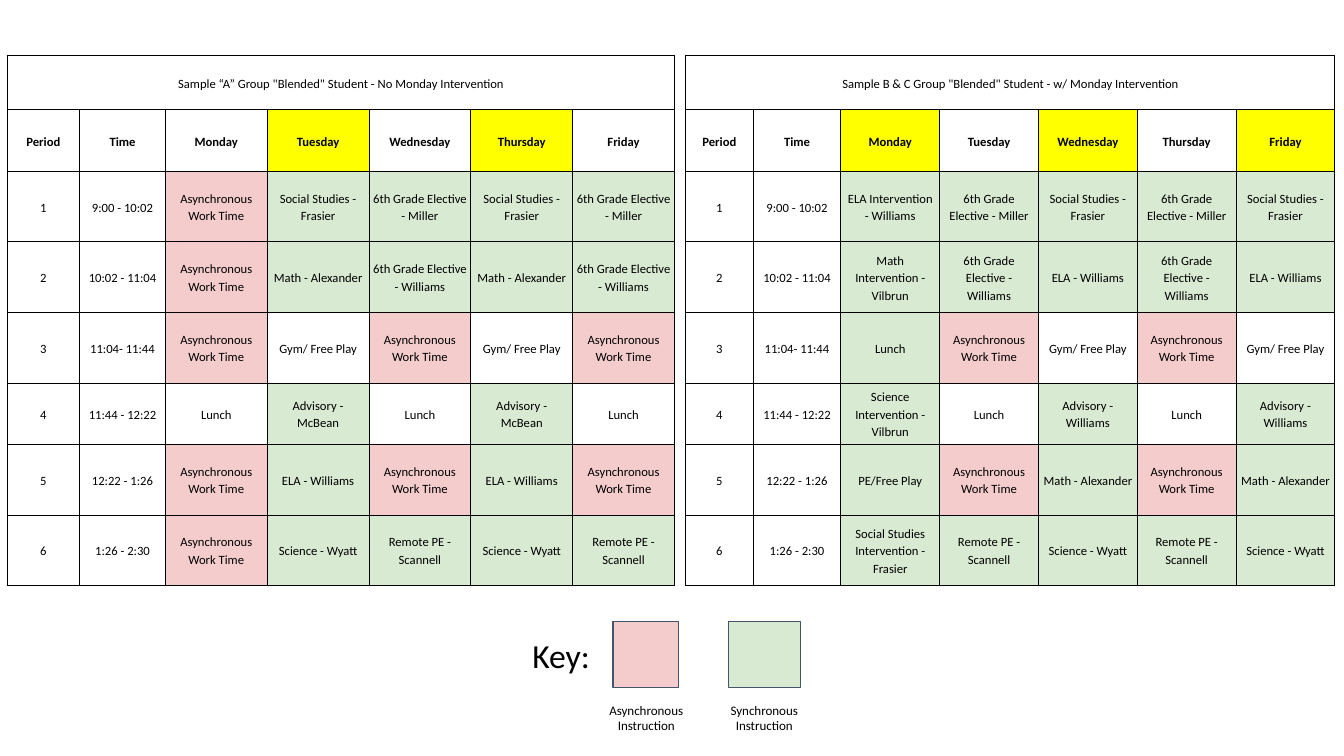
from dataclasses import dataclass

from lxml import etree
from pptx import Presentation
from pptx import util as u
from pptx.dml.color import RGBColor
from pptx.enum import shapes, text
from pptx.oxml import ns


@dataclass(frozen=True)
class Theme:
    font: str = "Calibri"
    ink: str = "000000"
    key_line: str = "44546A"
    asynchronous: str = "F4CCCC"
    synchronous: str = "D9EAD3"
    in_person: str = "FFFF00"
    line_width: float = 0.75
    table_size: float = 9
    key_size: float = 24
    label_size: float = 9.3


DAYS = ["Monday", "Tuesday", "Wednesday", "Thursday", "Friday"]
TIMES = ["9:00 - 10:02", "10:02 - 11:04", "11:04- 11:44",
         "11:44 - 12:22", "12:22 - 1:26", "1:26 - 2:30"]
ROW_HEIGHTS = [0.54, 0.61, 0.7, 0.7, 0.7, 0.61, 0.7, 0.7]
ASYNC = "Asynchronous Work Time"
BREAKS = {"Lunch", "Gym/ Free Play"}

GROUP_A_MONDAY = [ASYNC, ASYNC, ASYNC, "Lunch", ASYNC, ASYNC]
GROUP_A_IN_PERSON = ["Social Studies - Frasier", "Math - Alexander", "Gym/ Free Play",
                     "Advisory - McBean", "ELA - Williams", "Science - Wyatt"]
GROUP_BC_MONDAY = ["ELA Intervention - Williams", "Math Intervention - Vilbrun", "Lunch",
                   "Science Intervention - Vilbrun", "PE/Free Play",
                   "Social Studies Intervention - Frasier"]
GROUP_BC_IN_PERSON = ["Social Studies - Frasier", "ELA - Williams", "Gym/ Free Play",
                      "Advisory - Williams", "Math - Alexander", "Science - Wyatt"]
REMOTE = ["6th Grade Elective - Miller", "6th Grade Elective - Williams", ASYNC,
          "Lunch", ASYNC, "Remote PE - Scannell"]


class ScheduleSlide:
    def __init__(self, slide, theme):
        self.slide = slide
        self.theme = theme

    def format_paragraph(self, paragraph, size, align, bold=False):
        paragraph.alignment = align
        paragraph.font.name = self.theme.font
        paragraph.font.size = u.Pt(size)
        paragraph.font.bold = bold
        paragraph.font.color.rgb = RGBColor.from_string(self.theme.ink)

    def label(self, left, top, width, wording, size, align=text.PP_ALIGN.CENTER):
        box = self.slide.shapes.add_textbox(
            u.Inches(left), u.Inches(top), u.Inches(width), u.Inches(0.32))
        frame = box.text_frame
        frame.word_wrap = True
        frame.vertical_anchor = text.MSO_ANCHOR.MIDDLE
        frame.margin_left = frame.margin_right = u.Inches(0.13)
        frame.margin_top = frame.margin_bottom = u.Inches(0.13)
        frame.text = wording
        self.format_paragraph(frame.paragraphs[0], size, align)

    def swatch(self, left, width, color):
        square = self.slide.shapes.add_shape(
            shapes.MSO_SHAPE.RECTANGLE,
            u.Inches(left), u.Inches(6.17), u.Inches(width), u.Inches(0.65))
        square.shadow.inherit = False
        square.fill.solid()
        square.fill.fore_color.rgb = RGBColor.from_string(color)
        square.line.color.rgb = RGBColor.from_string(self.theme.key_line)
        square.line.width = u.Pt(self.theme.line_width)

    def outline(self, cell):
        """Draw a solid border on all four sides of a table cell."""
        properties = cell._tc.get_or_add_tcPr()
        for side in ("lnL", "lnR", "lnT", "lnB"):
            border = etree.SubElement(properties, ns.qn(f"a:{side}"),
                                      w=str(u.Pt(self.theme.line_width)))
            solid = etree.SubElement(border, ns.qn("a:solidFill"))
            etree.SubElement(solid, ns.qn("a:srgbClr"), val=self.theme.ink)

    def fill_cell(self, cell, wording, color=None, bold=False):
        cell.text = wording
        cell.vertical_anchor = text.MSO_ANCHOR.MIDDLE
        cell.margin_left = cell.margin_right = u.Inches(0.04)
        cell.margin_top = cell.margin_bottom = u.Inches(0.03)
        paragraph = cell.text_frame.paragraphs[0]
        paragraph.line_spacing = 1.15
        self.format_paragraph(paragraph, self.theme.table_size, text.PP_ALIGN.CENTER, bold)
        if color:
            cell.fill.solid()
            cell.fill.fore_color.rgb = RGBColor.from_string(color)

    def lesson_color(self, lesson, all_synchronous):
        if lesson == ASYNC:
            return self.theme.asynchronous
        if lesson in BREAKS and not all_synchronous:
            return None
        return self.theme.synchronous

    def schedule(self, left, widths, heading, week, in_person_days, synchronous_days=()):
        """Add a table; week holds one list of lessons for each day."""
        frame = self.slide.shapes.add_table(
            len(ROW_HEIGHTS), len(widths), u.Inches(left), u.Inches(0.55),
            u.Inches(sum(widths)), u.Inches(sum(ROW_HEIGHTS)))
        table = frame.table
        table.first_row = table.horz_banding = False
        for column, width in zip(table.columns, widths):
            column.width = u.Inches(width)
        for row, height in zip(table.rows, ROW_HEIGHTS):
            row.height = u.Inches(height)
        for cell in table.iter_cells():
            self.outline(cell)
            cell.fill.background()

        table.cell(0, 0).merge(table.cell(0, len(widths) - 1))
        self.fill_cell(table.cell(0, 0), heading)
        for col, wording in enumerate(["Period", "Time"] + DAYS):
            color = self.theme.in_person if wording in in_person_days else None
            self.fill_cell(table.cell(1, col), wording, color, bold=True)
        for period, time in enumerate(TIMES, start=1):
            self.fill_cell(table.cell(period + 1, 0), str(period))
            self.fill_cell(table.cell(period + 1, 1), time)
        for col, (day, lessons) in enumerate(zip(DAYS, week), start=2):
            for row, lesson in enumerate(lessons, start=2):
                color = self.lesson_color(lesson, day in synchronous_days)
                self.fill_cell(table.cell(row, col), lesson, color)


def main():
    deck = Presentation()
    deck.slide_width, deck.slide_height = u.Inches(13.33), u.Inches(7.5)
    theme = Theme()
    page = ScheduleSlide(deck.slides.add_slide(deck.slide_layouts[6]), theme)

    page.schedule(0.07, [0.72, 0.85] + [1.01] * 5,
                  'Sample “A” Group "Blended" Student - No Monday Intervention',
                  [GROUP_A_MONDAY] + [GROUP_A_IN_PERSON, REMOTE] * 2,
                  {"Tuesday", "Thursday"})
    page.schedule(6.8, [0.67, 0.87] + [0.98] * 5,
                  'Sample B & C Group "Blended" Student - w/ Monday Intervention',
                  [GROUP_BC_MONDAY] + [REMOTE, GROUP_BC_IN_PERSON] * 2,
                  {"Monday", "Wednesday", "Friday"}, synchronous_days={"Monday"})

    page.label(5.15, 6.34, 0.95, "Key:", theme.key_size, text.PP_ALIGN.LEFT)
    page.swatch(6.08, 0.65, theme.asynchronous)
    page.swatch(7.23, 0.71, theme.synchronous)
    page.label(5.81, 6.96, 1.2, "Asynchronous Instruction", theme.label_size)
    page.label(6.98, 6.96, 1.2, "Synchronous Instruction", theme.label_size)

    deck.save("out.pptx")


if __name__ == "__main__":
    main()
